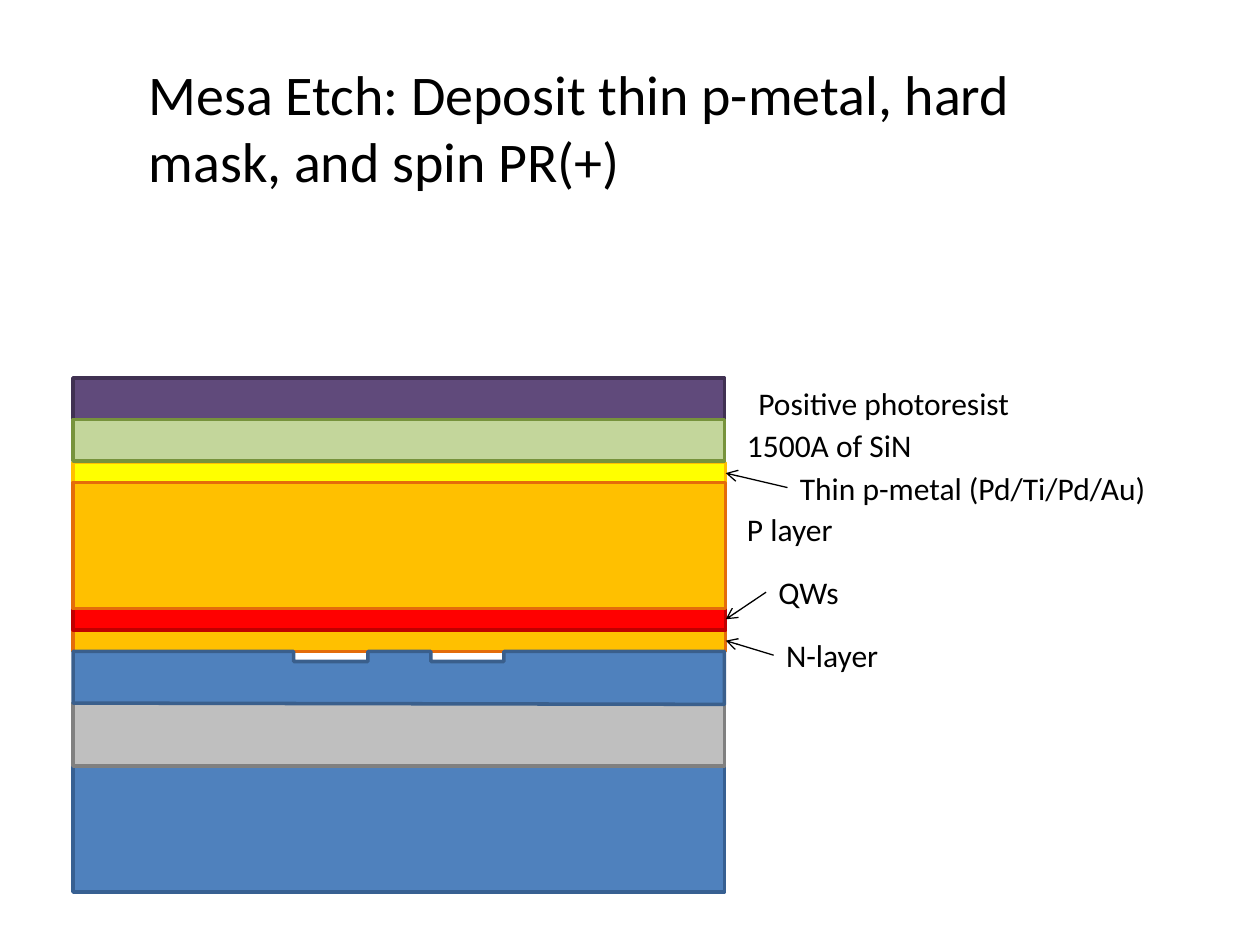
from lxml import etree
from pptx import Presentation
from pptx import util as u
from pptx.dml.color import RGBColor
from pptx.enum import shapes, text
from pptx.oxml.ns import qn

Inches, Pt = u.Inches, u.Pt


def paint(shape, fill, line):
    shape.shadow.inherit = False
    shape.fill.solid()
    shape.fill.fore_color.rgb = RGBColor.from_string(fill)
    shape.line.color.rgb = RGBColor.from_string(line)
    shape.line.width = Pt(2)


def write(frame, wording, size):
    frame.text = wording
    frame.vertical_anchor = text.MSO_ANCHOR.TOP
    paragraph = frame.paragraphs[0]
    paragraph.alignment = text.PP_ALIGN.LEFT
    font = paragraph.runs[0].font
    font.name, font.size = "Calibri", Pt(size)
    font.color.rgb = RGBColor.from_string("000000")


prs = Presentation()
prs.slide_width, prs.slide_height = Inches(10), Inches(7.5)
slide = prs.slides.add_slide(prs.slide_layouts[5])

title = slide.shapes.title
title.left, title.top = Inches(1.08), Inches(0.42)
title.width, title.height = Inches(7.25), Inches(1.18)
write(title.text_frame, "Mesa Etch: Deposit thin p-metal, hard mask, and spin PR(+)", 32)
title.text_frame.auto_size = text.MSO_AUTO_SIZE.NONE

# Wafer stack, from back to front: top, width, height, fill, outline
LEFT = 0.58
layers = {}
for name, top, width, height, fill, line in [
    ("p-metal", 3.67, 5.18, 0.17, "FFFF00", "FFC000"),
    ("N-layer", 5, 5.18, 0.17, "FFC000", "E46C0A"),
    ("QWs", 4.83, 5.18, 0.17, "FF0000", "C00000"),
    ("P layer", 3.83, 5.18, 1, "FFC000", "E46C0A"),
    ("substrate", 6.08, 5.17, 1, "4F81BD", "376092"),
    ("oxide", 5.58, 5.17, 0.5, "BFBFBF", "808080"),
    ("photoresist", 3, 5.17, 0.33, "604A7B", "403152"),
    ("SiN", 3.33, 5.17, 0.33, "C3D69B", "77933C"),
]:
    layers[name] = slide.shapes.add_shape(
        shapes.MSO_SHAPE.RECTANGLE, Inches(LEFT), Inches(top), Inches(width), Inches(height))
    paint(layers[name], fill, line)

# Silicon layer with two trenches in its upper edge
surface, trench_floor = 5.17, 5.25
outline = []
for start, end in [(2.33, 2.92), (3.42, 4)]:
    outline += [(start, surface), (start, trench_floor), (end, trench_floor), (end, surface)]
outline += [(5.75, surface), (5.75, 5.59), (LEFT, 5.58)]
builder = slide.shapes.build_freeform(Inches(LEFT), Inches(surface))
builder.add_line_segments([(Inches(x), Inches(y)) for x, y in outline], close=True)
paint(builder.convert_to_shape(), "4F81BD", "3A5F8C")

# Labels: wording, left, top, width, layer that an arrow points to
for wording, left, top, width, target in [
    ("Positive photoresist", 5.92, 3, 2.21, None),
    ("1500A of SiN", 5.83, 3.33, 1.52, None),
    ("Thin p-metal (Pd/Ti/Pd/Au)", 6.25, 3.67, 2.96, "p-metal"),
    ("P layer", 5.83, 4, 0.89, None),
    ("QWs", 6.08, 4.5, 0.68, "QWs"),
    ("N-layer", 6.14, 5, 0.94, "N-layer"),
]:
    label = slide.shapes.add_textbox(Inches(left), Inches(top), Inches(width), Inches(0.4))
    label.text_frame.word_wrap = False
    write(label.text_frame, wording, 18)
    if target:
        arrow = slide.shapes.add_connector(shapes.MSO_CONNECTOR.STRAIGHT, 0, 0, 0, 0)
        arrow.begin_connect(label, 1)
        arrow.end_connect(layers[target], 3)
        arrow.line.color.rgb = RGBColor.from_string("000000")
        arrow.line.width = Pt(0.75)
        etree.SubElement(arrow.line._get_or_add_ln(), qn("a:tailEnd"), type="arrow")
        etree.SubElement(arrow._element.spPr, qn("a:effectLst"))

prs.save("out.pptx")
